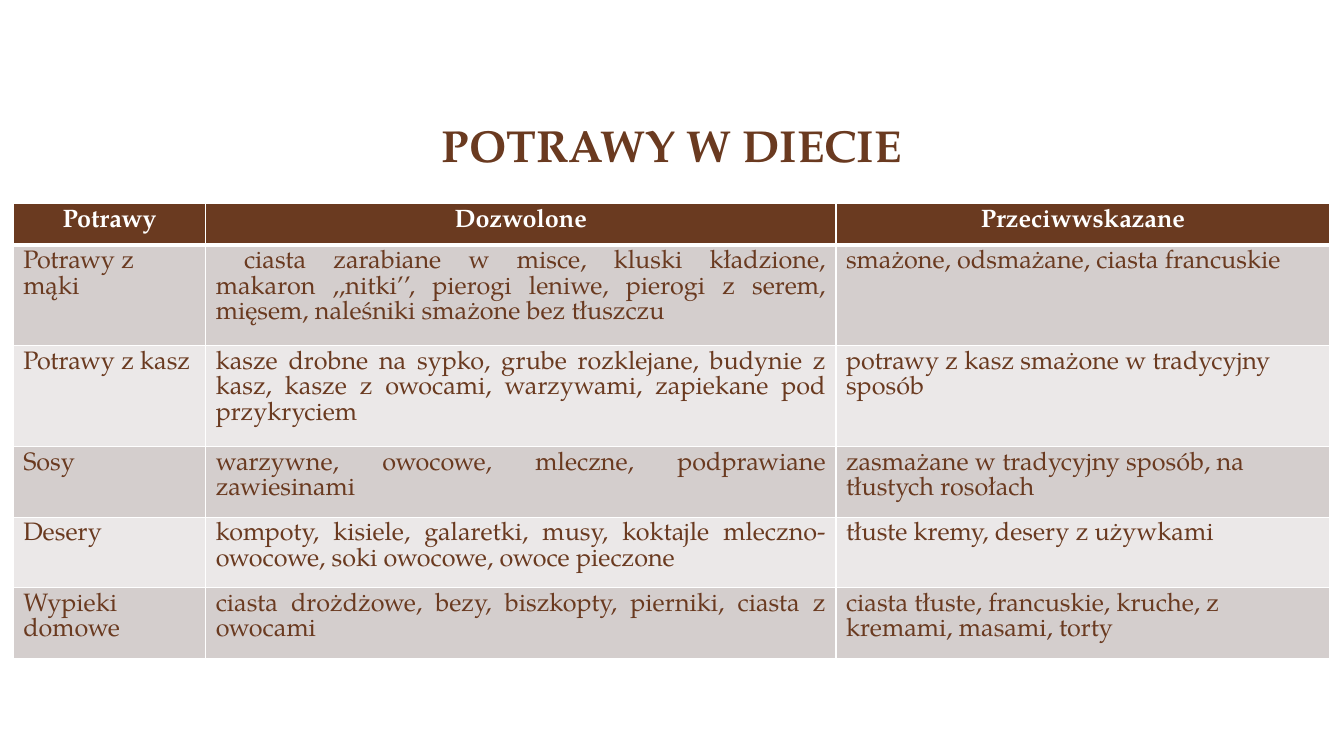
import dataclasses

import pptx
import pptx.dml.color
import pptx.enum.text
import pptx.oxml
import pptx.oxml.ns
import pptx.util

ALIGN = pptx.enum.text.PP_ALIGN
ANCHOR = pptx.enum.text.MSO_ANCHOR
FONT = "TeX Gyre Pagella"
BROWN, WHITE = "6A3A20", "FFFFFF"
BANDS = ("D4CECD", "EBE8E8")
SLIDE_W, SLIDE_H = pptx.util.Inches(13.33), pptx.util.Inches(7.5)
COLUMN_SHARES = (14.33, 46.89, 36.76)
HEADINGS = ("Potrawy", "Dozwolone", "Przeciwwskazane")
HEADING_SHARE = 5.47


@dataclasses.dataclass(frozen=True)
class Dish:
    name: str
    allowed: str
    forbidden: str
    share: float
    indent: float = 0


DISHES = (
    Dish("Potrawy z mąki",
         "ciasta zarabiane w misce, kluski kładzione, makaron ,,nitki’’, pierogi leniwe, "
         "pierogi z serem, mięsem, naleśniki smażone bez tłuszczu",
         "smażone, odsmażane, ciasta francuskie", 13.33, indent=0.28),
    Dish("Potrawy z kasz",
         "kasze drobne na sypko, grube rozklejane, budynie z kasz, kasze z owocami, "
         "warzywami, zapiekane pod przykryciem",
         "potrawy z kasz smażone w tradycyjny sposób", 13.33),
    Dish("Sosy", "warzywne, owocowe, mleczne, podprawiane zawiesinami",
         "zasmażane w tradycyjny sposób, na tłustych rosołach", 9.33),
    Dish("Desery",
         "kompoty, kisiele, galaretki, musy, koktajle mleczno-owocowe, soki owocowe, "
         "owoce pieczone",
         "tłuste kremy, desery z używkami", 9.33),
    Dish("Wypieki domowe", "ciasta drożdżowe, bezy, biszkopty, pierniki, ciasta z owocami",
         "ciasta tłuste, francuskie, kruche, z kremami, masami, torty", 9.33),
)


def rgb(colour: str) -> pptx.dml.color.RGBColor:
    return pptx.dml.color.RGBColor.from_string(colour)


def across(share: float) -> int:
    """Percent of the slide's width."""
    return round(SLIDE_W * share / 100)


def down(share: float) -> int:
    """Percent of the slide's height."""
    return round(SLIDE_H * share / 100)


def write(tf, text: str, size: float, colour: str, bold: bool, align, leading: float,
          indent: float = 0) -> None:
    p = tf.paragraphs[0]
    p.alignment, p.line_spacing = align, pptx.util.Pt(leading)
    if indent:
        p._p.get_or_add_pPr().set("indent", str(pptx.util.Inches(indent)))
    r = p.add_run()
    r.text = text
    font_format = {"name": FONT, "size": pptx.util.Pt(size), "bold": bold}
    for key, value in font_format.items():
        setattr(r.font, key, value)
    r.font.color.rgb = rgb(colour)


def style_cell(cell, fill: str, top: float, bottom: float) -> None:
    """Draw white borders, widths in points, then fill the cell."""
    tc_pr = cell._tc.get_or_add_tcPr()
    for side, width in {"L": 1, "R": 1, "T": top, "B": bottom}.items():
        tc_pr.append(pptx.oxml.parse_xml(
            f'<a:ln{side} {pptx.oxml.ns.nsdecls("a")} w="{pptx.util.Pt(width)}">'
            f'<a:solidFill><a:srgbClr val="{WHITE}"/></a:solidFill></a:ln{side}>'))
    cell.fill.solid()
    cell.fill.fore_color.rgb = rgb(fill)


def add_title(s) -> None:
    sp = s.shapes.add_textbox(across(10), down(6.27), across(80), down(17.07))
    tf = sp.text_frame
    tf.word_wrap, tf.vertical_anchor = True, ANCHOR.BOTTOM
    write(tf, "POTRAWY W DIECIE", 32, BROWN, True, ALIGN.CENTER, 34)


def add_diet_table(s) -> None:
    shares = (HEADING_SHARE, *(dish.share for dish in DISHES))
    table = s.shapes.add_table(len(shares), len(HEADINGS), across(0.98), down(26.95),
                               across(sum(COLUMN_SHARES)), down(sum(shares))).table
    for column, share in zip(table.columns, COLUMN_SHARES):
        column.width = across(share)
    for row, share in zip(table.rows, shares):
        row.height = down(share)
    for cell, heading in zip(table.rows[0].cells, HEADINGS):
        style_cell(cell, BROWN, 1, 3)
        write(cell.text_frame, heading, 18, WHITE, True, ALIGN.CENTER, 18.2)
    for i, dish in enumerate(DISHES):
        texts = ((dish.name, ALIGN.LEFT, 0),
                 (dish.allowed, ALIGN.JUSTIFY, dish.indent),
                 (dish.forbidden, ALIGN.LEFT, 0))
        for cell, (text, align, indent) in zip(table.rows[i + 1].cells, texts):
            style_cell(cell, BANDS[i % 2], 1 if i else 3, 1)
            write(cell.text_frame, text, 18, BROWN, False, align, 18.2, indent)


def main() -> None:
    prs = pptx.Presentation()
    prs.slide_width, prs.slide_height = SLIDE_W, SLIDE_H
    s = prs.slides.add_slide(prs.slide_layouts[6])
    add_title(s)
    add_diet_table(s)
    prs.save("out.pptx")


if __name__ == "__main__":
    main()
